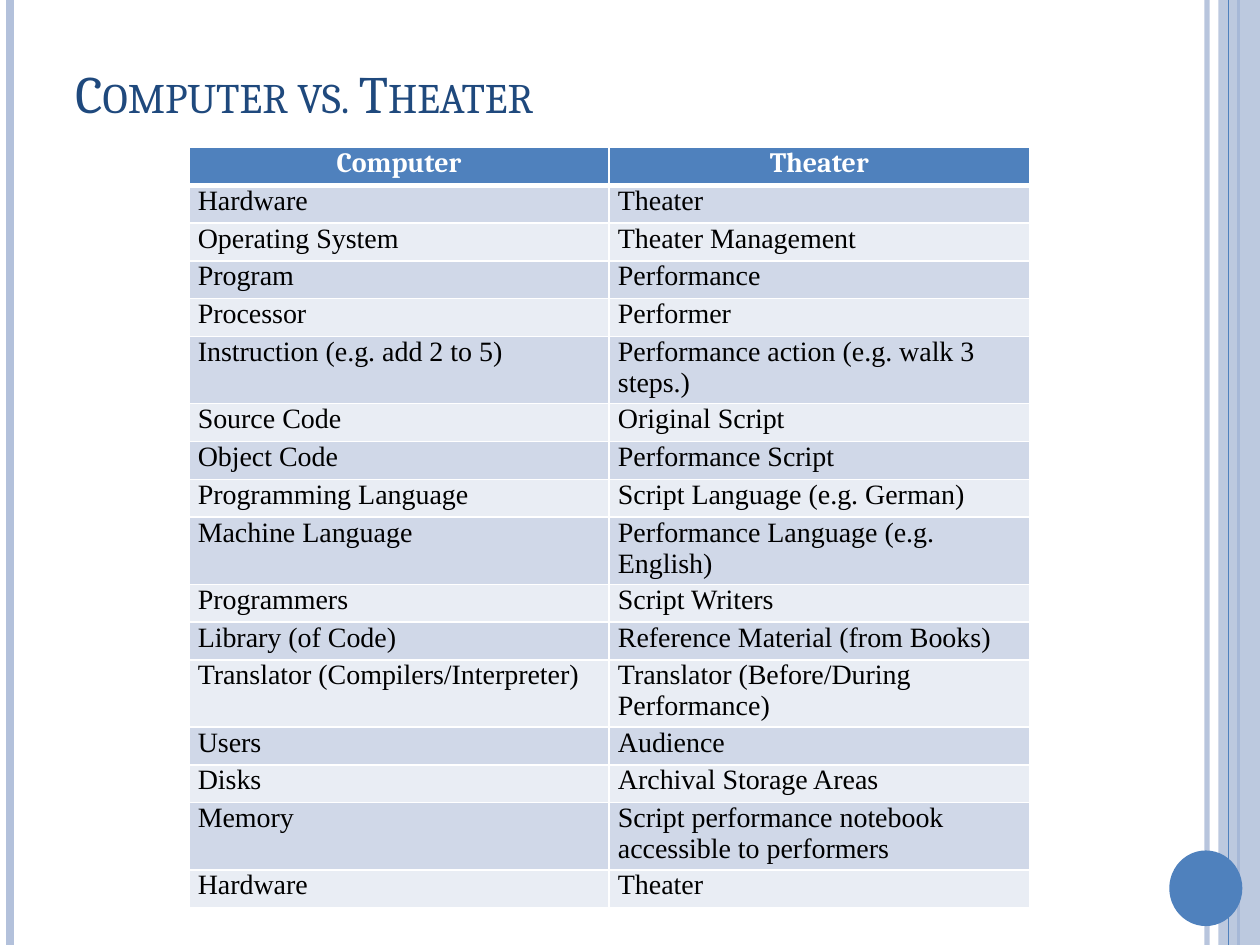
from lxml import etree
from pptx import Presentation
from pptx.dml.color import RGBColor
from pptx.enum.shapes import MSO_CONNECTOR, MSO_SHAPE
from pptx.enum.text import MSO_ANCHOR, PP_ALIGN
from pptx.oxml.ns import qn
from pptx.util import Inches, Pt

STRAIGHT = MSO_CONNECTOR.STRAIGHT
RECTANGLE, OVAL = MSO_SHAPE.RECTANGLE, MSO_SHAPE.OVAL
MIDDLE, TOP = MSO_ANCHOR.MIDDLE, MSO_ANCHOR.TOP
CENTER, LEFT = PP_ALIGN.CENTER, PP_ALIGN.LEFT

COLORS = {
    "accent": "4F81BD",
    "pale": "B3C1DB",
    "title": "1F497D",
    "band_dark": "D0D8E8",
    "band_light": "E9EDF4",
    "white": "FFFFFF",
    "black": "000000",
}
HEADING_FONT, BODY_FONT = "Cambria", "Times New Roman"
SLIDE_WIDTH, SLIDE_HEIGHT = 10, 7.5

COMPARISON = [
    ("Computer", "Theater"),
    ("Hardware", "Theater"),
    ("Operating System", "Theater Management"),
    ("Program", "Performance"),
    ("Processor", "Performer"),
    ("Instruction (e.g. add 2 to 5)", "Performance action (e.g. walk 3 steps.)"),
    ("Source Code", "Original Script"),
    ("Object Code", "Performance Script"),
    ("Programming Language", "Script Language (e.g. German)"),
    ("Machine Language", "Performance Language (e.g. English)"),
    ("Programmers", "Script Writers"),
    ("Library (of Code)", "Reference Material (from Books)"),
    ("Translator (Compilers/Interpreter)", "Translator (Before/During Performance)"),
    ("Users", "Audience"),
    ("Disks", "Archival Storage Areas"),
    ("Memory", "Script performance notebook accessible to performers"),
    ("Hardware", "Theater"),
]


def color(name):
    return RGBColor.from_string(COLORS[name])


def set_opacity(element, percent):
    fill_color = next(element.iter(qn("a:srgbClr")))
    etree.SubElement(fill_color, qn("a:alpha"), val=str(percent * 1000))


def add_run(paragraph, text, font_name, size, color_name, bold=False):
    run = paragraph.add_run()
    run.text = text
    run.font.name = font_name
    run.font.size = Pt(size)
    run.font.bold = bold
    run.font.color.rgb = color(color_name)
    return run


def add_stripe(slide, x, top, height, color_name, width, opacity=100):
    stripe = slide.shapes.add_connector(
        STRAIGHT, Inches(x), Inches(top), Inches(x), Inches(top + height))
    stripe.line.color.rgb = color(color_name)
    stripe.line.width = Pt(width)
    properties = stripe._element.spPr
    if opacity < 100:
        set_opacity(properties, opacity)
    etree.SubElement(properties, qn("a:effectLst"))


def add_block(slide, kind, left, top, width, height, color_name):
    shape = slide.shapes.add_shape(
        kind, Inches(left), Inches(top), Inches(width), Inches(height))
    shape.shadow.inherit = False
    shape.fill.solid()
    shape.fill.fore_color.rgb = color(color_name)
    shape.line.fill.background()
    return shape


def add_frame(slide, left, top, width, height):
    """Stripes along both edges, and the disc at the lower right."""
    right = left + width
    add_stripe(slide, right - 0.42, top, height, "pale", 3, 93)
    add_stripe(slide, left + 0.08, top, height, "pale", 4.5)
    add_stripe(slide, right - 0.17, top, height, "accent", 1.5)
    panel = add_block(slide, RECTANGLE, right - 0.33, top, 0.33, height, "pale")
    set_opacity(panel._element.spPr, 87)
    add_stripe(slide, right - 0.25, top, height, "accent", 0.75)
    add_block(slide, OVAL, right - 0.72, top + height - 0.75, 0.58, 0.6, "accent")


def add_title(slide, left, top, width, height, text):
    box = slide.shapes.add_textbox(
        Inches(left), Inches(top), Inches(width), Inches(height))
    frame = box.text_frame
    frame.word_wrap = True
    frame.vertical_anchor = MIDDLE
    run = add_run(frame.paragraphs[0], text, HEADING_FONT, 30, "title")
    run._r.get_or_add_rPr().set("cap", "small")


def set_borders(cell, top_width, bottom_width):
    properties = cell._tc.get_or_add_tcPr()
    widths = {"lnL": 1, "lnR": 1, "lnT": top_width, "lnB": bottom_width}
    for index, (side, width) in enumerate(widths.items()):
        border = etree.Element(qn(f"a:{side}"), w=str(Pt(width)))
        fill = etree.SubElement(border, qn("a:solidFill"))
        etree.SubElement(fill, qn("a:srgbClr"), val=COLORS["white"])
        properties.insert(index, border)


def fill_cell(cell, text, row_number):
    is_header = row_number == 0
    band = "band_dark" if row_number % 2 else "band_light"
    cell.fill.solid()
    cell.fill.fore_color.rgb = color("accent" if is_header else band)
    cell.margin_left = cell.margin_right = Inches(0.07)
    cell.margin_top = cell.margin_bottom = 0
    cell.vertical_anchor = TOP
    paragraph = cell.text_frame.paragraphs[0]
    paragraph.alignment = CENTER if is_header else LEFT
    if is_header:
        add_run(paragraph, text, HEADING_FONT, 16, "white", bold=True)
    else:
        add_run(paragraph, text, BODY_FONT, 16, "black")
    # A thick rule separates the header from the body
    set_borders(cell, 3 if row_number == 1 else 1, 3 if is_header else 1)


def add_comparison(slide, left, top, width, row_height, rows):
    table = slide.shapes.add_table(
        len(rows), len(rows[0]), Inches(left), Inches(top),
        Inches(width), Inches(row_height * len(rows))).table
    for row_number, texts in enumerate(rows):
        table.rows[row_number].height = Inches(row_height)
        for column_number, text in enumerate(texts):
            fill_cell(table.cell(row_number, column_number), text, row_number)


def main():
    presentation = Presentation()
    presentation.slide_width = Inches(SLIDE_WIDTH)
    presentation.slide_height = Inches(SLIDE_HEIGHT)
    slide = presentation.slides.add_slide(presentation.slide_layouts[6])
    add_frame(slide, 0, 0, SLIDE_WIDTH, SLIDE_HEIGHT)
    add_title(slide, 0.5, 0.3, 8.67, 0.87, "Computer vs. Theater")
    add_comparison(slide, 1.5, 1.17, 6.67, 0.3, COMPARISON)
    presentation.save("out.pptx")


if __name__ == "__main__":
    main()
